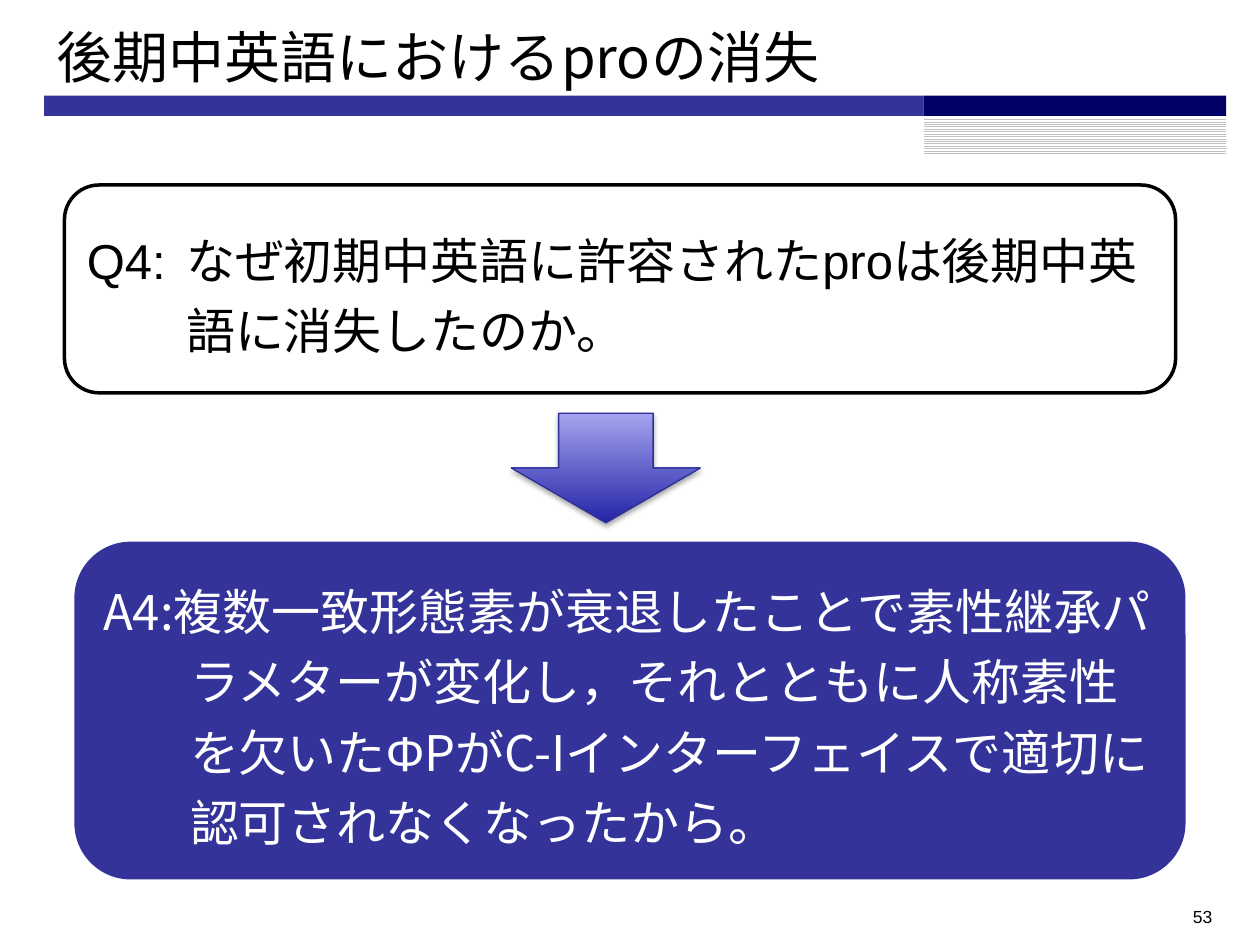
from dataclasses import dataclass

from lxml.etree import SubElement
from pptx import Presentation
from pptx.dml.color import RGBColor
from pptx.enum.dml import MSO_PATTERN
from pptx.enum.shapes import MSO_SHAPE
from pptx.enum.text import MSO_ANCHOR, PP_ALIGN
from pptx.oxml.ns import qn
from pptx.util import Cm, Pt


@dataclass(frozen=True)
class Theme:
    """Colours, fonts and type sizes of the slide."""
    black: RGBColor = RGBColor(0, 0, 0)
    white: RGBColor = RGBColor(255, 255, 255)
    indigo: RGBColor = RGBColor(0x33, 0x33, 0x99)
    navy: RGBColor = RGBColor(0, 0, 0x66)
    silver: RGBColor = RGBColor(0xC0, 0xC0, 0xC0)
    arrow_dark: RGBColor = RGBColor(0x24, 0x24, 0xA8)
    arrow_light: RGBColor = RGBColor(0xA4, 0xA4, 0xEF)
    arrow_edge: RGBColor = RGBColor(0x2F, 0x2F, 0x98)
    latin: str = "Arial"
    cjk: str = "Noto Sans CJK JP"
    title: Pt = Pt(32)
    body: Pt = Pt(28)
    number: Pt = Pt(10)


T = Theme()


def add_shape(s, kind, box, fill=None, line=None, width=1):
    """Add a shadowless preset shape at a box given in centimetres."""
    sp = s.shapes.add_shape(kind, *map(Cm, box))
    sp.shadow.inherit = False
    if fill is not None:
        sp.fill.solid()
        sp.fill.fore_color.rgb = fill
    if line is None:
        sp.line.fill.background()
    else:
        sp.line.color.rgb = line
        sp.line.width = Pt(width)
    return sp


def write(sp, runs, size, color, anchor=MSO_ANCHOR.TOP, hang=None, **formats):
    """Fill the first paragraph with (text, font) runs, optionally hanging."""
    tf = sp.text_frame
    for name, value in dict(word_wrap=True, vertical_anchor=anchor).items():
        setattr(tf, name, value)
    p = tf.paragraphs[0]
    if hang is not None:
        pPr = p._p.get_or_add_pPr()
        pPr.set("marL", str(Cm(hang)))
        pPr.set("indent", str(-Cm(hang)))
        tabs = SubElement(pPr, qn("a:tabLst"))
        SubElement(tabs, qn("a:tab"), pos=str(Cm(hang)), algn="l")
    for name, value in {"alignment": PP_ALIGN.LEFT, **formats}.items():
        setattr(p, name, value)
    for text, font in runs:
        r = p.add_run()
        r.text = text
        for name, value in dict(name=font, size=size).items():
            setattr(r.font, name, value)
        r.font.color.rgb = color
        SubElement(r._r.get_or_add_rPr(), qn("a:ea"), typeface=T.cjk)


def add_header(s, x, y, w, title):
    """Place the title above a two-tone rule with a hatched tab."""
    title_h, rule_h, tab_w = 1.6, 0.41, 6.1
    rule_y, tab_x = y + title_h, x + w - tab_w
    add_shape(s, MSO_SHAPE.RECTANGLE, (x, rule_y, w - tab_w, rule_h), T.indigo)
    hatch = add_shape(s, MSO_SHAPE.RECTANGLE, (tab_x, rule_y + 0.43, tab_w, 0.76))
    hatch.fill.patterned()
    hatch.fill.pattern = MSO_PATTERN.LIGHT_HORIZONTAL
    hatch.fill.fore_color.rgb = T.silver
    hatch.fill.back_color.rgb = T.white
    add_shape(s, MSO_SHAPE.RECTANGLE, (tab_x, rule_y, tab_w, rule_h), T.navy)
    sp = s.shapes.add_textbox(*map(Cm, (x, y, w, title_h)))
    write(sp, [(title, T.cjk)], T.title, T.black, MSO_ANCHOR.MIDDLE)


def add_panel(s, box, runs, hang, fill, color, line=None):
    """Place a rounded panel holding one hanging paragraph."""
    sp = add_shape(s, MSO_SHAPE.ROUNDED_RECTANGLE, box, fill, line, 2)
    write(sp, runs, T.body, color, MSO_ANCHOR.MIDDLE, hang, line_spacing=1.2)


def add_arrow(s, box):
    """Place the shaded arrow that leads from question to answer."""
    sp = add_shape(s, MSO_SHAPE.DOWN_ARROW, box, line=T.arrow_edge, width=0.75)
    sp.fill.gradient()
    sp.fill.gradient_angle = 90
    for stop, color in zip(sp.fill.gradient_stops, (T.arrow_dark, T.arrow_light)):
        stop.color.rgb = color
    effects = sp._element.spPr.find(qn("a:effectLst"))
    shadow = SubElement(effects, qn("a:outerShdw"), blurRad=str(Pt(3.1)),
                        dist=str(Pt(1.8)), dir="5400000", rotWithShape="0")
    shade = SubElement(shadow, qn("a:srgbClr"), val=str(T.black))
    SubElement(shade, qn("a:alpha"), val="35000")


def add_page_number(s, box, number):
    """Place the right-aligned page number."""
    sp = s.shapes.add_textbox(*map(Cm, box))
    write(sp, [(number, T.latin)], T.number, T.black, alignment=PP_ALIGN.RIGHT)


def main():
    """Build the slide and save it."""
    prs = Presentation()
    prs.slide_width, prs.slide_height = Cm(25.4), Cm(19.05)
    s = prs.slides.add_slide(prs.slide_layouts[6])
    add_header(s, 0.89, 0.33, 23.83, "後期中英語におけるproの消失")
    add_page_number(s, (18.77, 18.14, 5.92, 0.74), "53")
    question = [("Q4:\tなぜ初期中英語に許容されたproは後期中英語に消失したのか。", T.latin)]
    add_panel(s, (1.3, 3.73, 22.4, 4.19), question, 2, T.white, T.black, T.black)
    add_arrow(s, (10.31, 8.33, 3.81, 2.21))
    answer = [
        ("A4:複数一致形態素が衰退したことで素性継承パラメターが変化し，"
         "それとともに人称素性を欠いた", T.cjk),
        ("Φ", T.latin),
        ("PがC-Iインターフェイスで適切に認可されなくなったから。", T.cjk),
    ]
    add_panel(s, (1.5, 10.92, 22.4, 6.81), answer, 1.75, T.indigo, T.white)
    prs.save("out.pptx")


if __name__ == "__main__":
    main()
